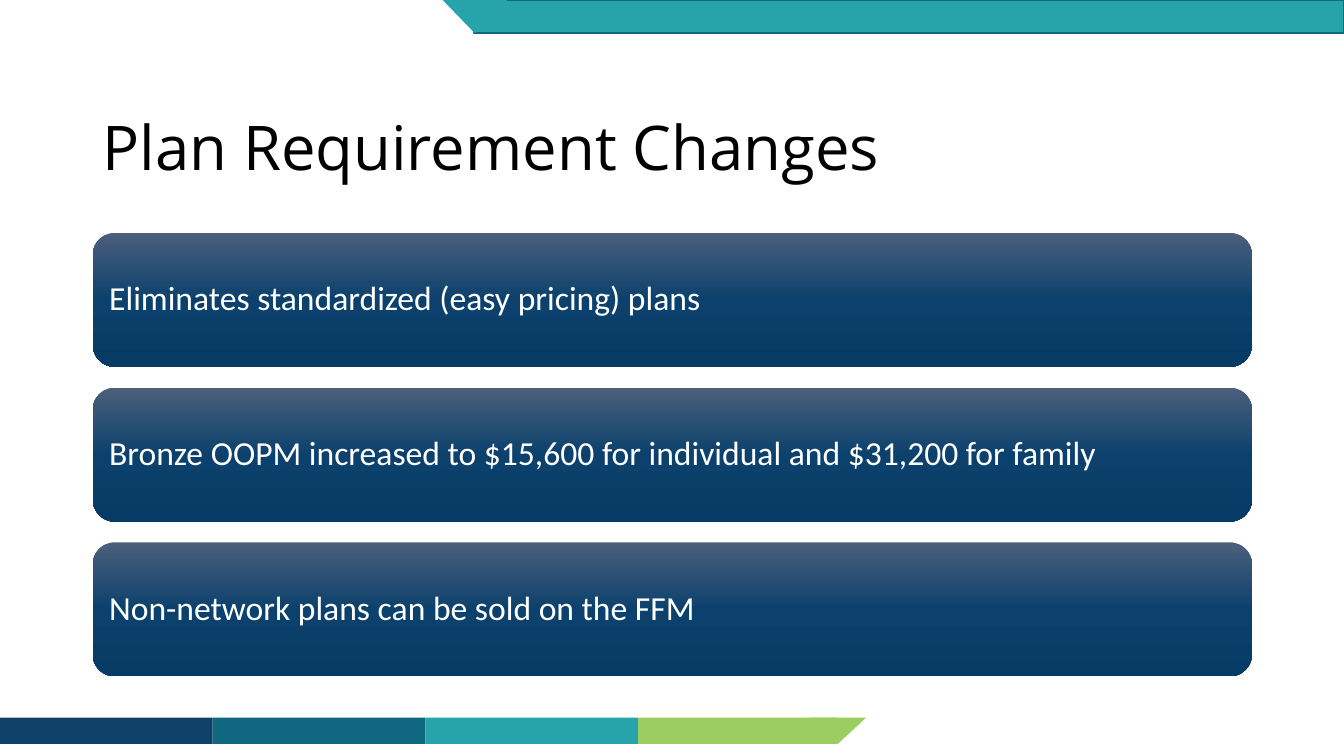
from copy import deepcopy

from pptx import Presentation
from pptx import util as u
from pptx.dml.color import RGBColor
from pptx.enum import shapes, text


class PlanSlide:
    COLORS = {
        "navy": "104169", "petrol": "0F687F", "teal": "26A3AB", "lime": "9CCD60",
        "black": "000000", "white": "FFFFFF",
        "card_top": "4C5F7C", "card_middle": "0C416D", "card_bottom": "063B65",
    }
    CARD_STOPS = [(0, "card_top"), (0.5, "card_middle"), (1, "card_bottom")]
    COLUMNS = ROWS = 100

    def __init__(self, deck):
        self.column = deck.slide_width / self.COLUMNS
        self.row = deck.slide_height / self.ROWS
        self.slide = deck.slides.add_slide(deck.slide_layouts[6])

    def color(self, name):
        return RGBColor.from_string(self.COLORS[name])

    def place(self, left, top, width, height):
        return (round(left * self.column), round(top * self.row),
                round(width * self.column), round(height * self.row))

    def block(self, kind, area, fill=None, line=None, rotation=0):
        block = self.slide.shapes.add_shape(kind, *self.place(*area))
        block.shadow.inherit = False
        block.rotation = rotation
        if fill:
            block.fill.solid()
            block.fill.fore_color.rgb = self.color(fill)
        if line:
            block.line.color.rgb = self.color(line)
            block.line.width = u.Pt(1)
        else:
            block.line.fill.background()
        return block

    def bar(self, area, fill, line=None):
        self.block(shapes.MSO_SHAPE.RECTANGLE, area, fill, line)

    def tip(self, area, fill):
        self.block(shapes.MSO_SHAPE.ISOSCELES_TRIANGLE, area, fill, rotation=180)

    def wording(self, frame, words, font, size, color):
        frame.word_wrap = True
        frame.vertical_anchor = text.MSO_ANCHOR.MIDDLE
        line = frame.paragraphs[0]
        line.alignment = text.PP_ALIGN.LEFT
        line.line_spacing = 0.9
        run = line.add_run()
        run.text = words
        run.font.name = font
        run.font.size = u.Pt(size)
        run.font.color.rgb = self.color(color)

    def title(self, area, words):
        heading = self.slide.shapes.add_textbox(*self.place(*area))
        self.wording(heading.text_frame, words, "Open Sans", 44, "black")

    def card(self, area, words):
        card = self.block(shapes.MSO_SHAPE.ROUNDED_RECTANGLE, area)
        card.fill.gradient()
        card.fill.gradient_angle = 270
        first_stop = card._element.spPr.xpath("./a:gradFill/a:gsLst/a:gs")[0]
        first_stop.addnext(deepcopy(first_stop))
        for stop, (position, name) in zip(card.fill.gradient_stops, self.CARD_STOPS):
            stop.position = position
            stop.color.rgb = self.color(name)
        card.text_frame.margin_left = card.text_frame.margin_right = u.Inches(0.1)
        self.wording(card.text_frame, words, "Calibri", 24, "white")


def main():
    deck = Presentation()
    deck.slide_width, deck.slide_height = u.Inches(13.33), u.Inches(7.5)
    page = PlanSlide(deck)

    footer_top, footer_height, footer_step = 94.93, 3.47, 15.83
    footer_parts = [("navy", footer_step), ("petrol", footer_step),
                    ("teal", footer_step), ("lime", 14.78)]
    for index, (name, width) in enumerate(footer_parts):
        page.bar((index * footer_step, footer_top, width, footer_height), name)
    page.tip((60.24, footer_top, 4.2, footer_height), "lime")

    header_height = 4.4
    page.bar((35.25, 0, 64.75, header_height), "teal", "petrol")
    page.tip((32.93, 0, 4.8, header_height), "teal")

    margin, content_width = 6.9, 86.25
    page.title((margin, 10.27, content_width, 19.33), "Plan Requirement Changes")

    changes = [
        "Eliminates standardized (easy pricing) plans",
        "Bronze OOPM increased to $15,600 for individual and $31,200 for family",
        "Non-network plans can be sold on the FFM",
    ]
    cards_top, card_height, card_step = 30.8, 17.73, 20.47
    for index, change in enumerate(changes):
        page.card((margin, cards_top + index * card_step, content_width, card_height), change)

    deck.save("out.pptx")


if __name__ == "__main__":
    main()
